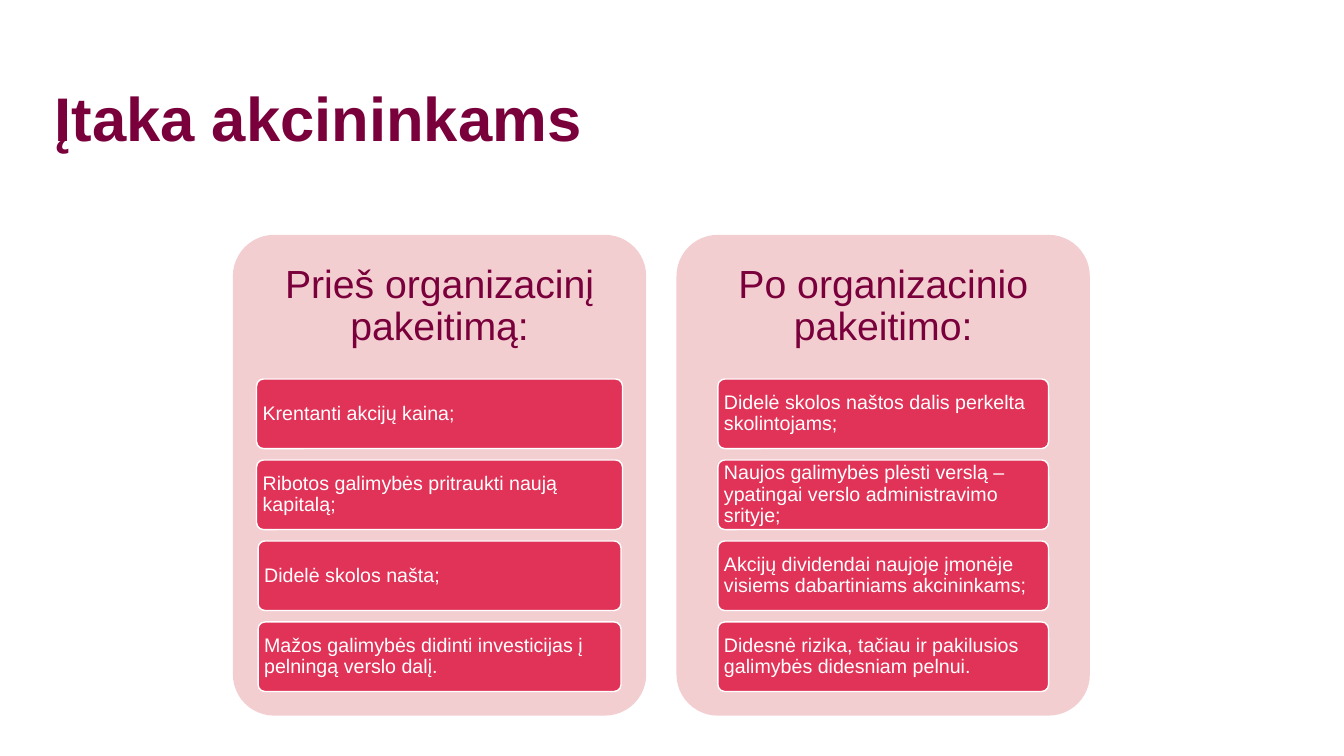
import pptx
import pptx.util
import pptx.dml.color
import pptx.enum.shapes
import pptx.enum.text

Inches = pptx.util.Inches
ANCHOR = pptx.enum.text.MSO_ANCHOR
ALIGN = pptx.enum.text.PP_ALIGN

COLORS = {"wine": "7A003B", "blush": "F3CED1", "crimson": "E03357", "white": "FFFFFF"}

HEADING_HEIGHT = 1.43
CARD_HEIGHT = 0.69
CARDS_HEIGHT = 3.1
CORNER = 0.1

BEFORE = ("Prieš organizacinį pakeitimą:", [
    ("Krentanti akcijų kaina;", 3.63),
    ("Ribotos galimybės pritraukti naują kapitalą;", 3.63),
    ("Didelė skolos našta;", 3.6),
    ("Mažos galimybės didinti investicijas į pelningą verslo dalį.", 3.6),
])
AFTER = ("Po organizacinio pakeitimo:", [
    ("Didelė skolos naštos dalis perkelta skolintojams;", 3.28),
    ("Naujos galimybės plėsti verslą – ypatingai verslo administravimo srityje;", 3.28),
    ("Akcijų dividendai naujoje įmonėje visiems dabartiniams akcininkams;", 3.28),
    ("Didesnė rizika, tačiau ir pakilusios galimybės didesniam pelnui.", 3.28),
])


def rgb(name):
    return pptx.dml.color.RGBColor.from_string(COLORS[name])


def apply(target, values):
    for attribute, value in values.items():
        setattr(target, attribute, value)


def write(frame, text, size, color, anchor, align, margins, bold=False):
    side, edge = margins
    apply(frame, {
        "text": text, "word_wrap": True, "vertical_anchor": anchor,
        "auto_size": pptx.enum.text.MSO_AUTO_SIZE.NONE,
        "margin_left": Inches(side), "margin_right": Inches(side),
        "margin_top": Inches(edge), "margin_bottom": Inches(edge),
    })
    paragraph = frame.paragraphs[0]
    apply(paragraph, {"alignment": align, "line_spacing": 0.9})
    apply(paragraph.runs[0].font, {"name": "Arial", "size": pptx.util.Pt(size), "bold": bold})
    paragraph.runs[0].font.color.rgb = rgb(color)


def add_rounded(slide, box, fill):
    rounded = slide.shapes.add_shape(
        pptx.enum.shapes.MSO_SHAPE.ROUNDED_RECTANGLE, *map(Inches, box))
    rounded.adjustments[0] = CORNER
    rounded.shadow.inherit = False
    rounded.fill.solid()
    rounded.fill.fore_color.rgb = rgb(fill)
    return rounded


def add_card(slide, box, text):
    card = add_rounded(slide, box, "crimson")
    card.line.color.rgb = rgb("white")
    card.line.width = pptx.util.Pt(1)
    write(card.text_frame, text, 14, "white", ANCHOR.MIDDLE, ALIGN.LEFT, (0.04, 0.03))


def add_panel(slide, box, heading_text, points):
    left, top, width, height = box
    add_rounded(slide, box, "blush").line.fill.background()
    heading = slide.shapes.add_textbox(*map(Inches, (left, top, width, HEADING_HEIGHT)))
    write(heading.text_frame, heading_text, 28, "wine", ANCHOR.MIDDLE, ALIGN.CENTER, (0.12, 0.12))
    pitch = (CARDS_HEIGHT - CARD_HEIGHT) / (len(points) - 1)
    for row, (point, card_width) in enumerate(points):
        card_left = left + (width - card_width) / 2
        card_top = top + HEADING_HEIGHT + row * pitch
        add_card(slide, (card_left, card_top, card_width, CARD_HEIGHT), point)


def add_title(slide, box, text):
    title = slide.shapes.title
    apply(title, dict(zip(("left", "top", "width", "height"), map(Inches, box))))
    write(title.text_frame, text, 44, "wine", ANCHOR.TOP, ALIGN.LEFT, (0.1, 0.05), True)


def main():
    deck = pptx.Presentation()
    apply(deck, {"slide_width": Inches(13.33), "slide_height": Inches(7.5)})
    slide = deck.slides.add_slide(deck.slide_layouts[5])
    add_title(slide, (0.44, 0.83, 9.9, 1.17), "Įtaka akcininkams")
    for column, (heading, points) in enumerate((BEFORE, AFTER)):
        add_panel(slide, (2.31 + column * 4.4, 2.33, 4.1, 4.77), heading, points)
    deck.save("out.pptx")


if __name__ == "__main__":
    main()
